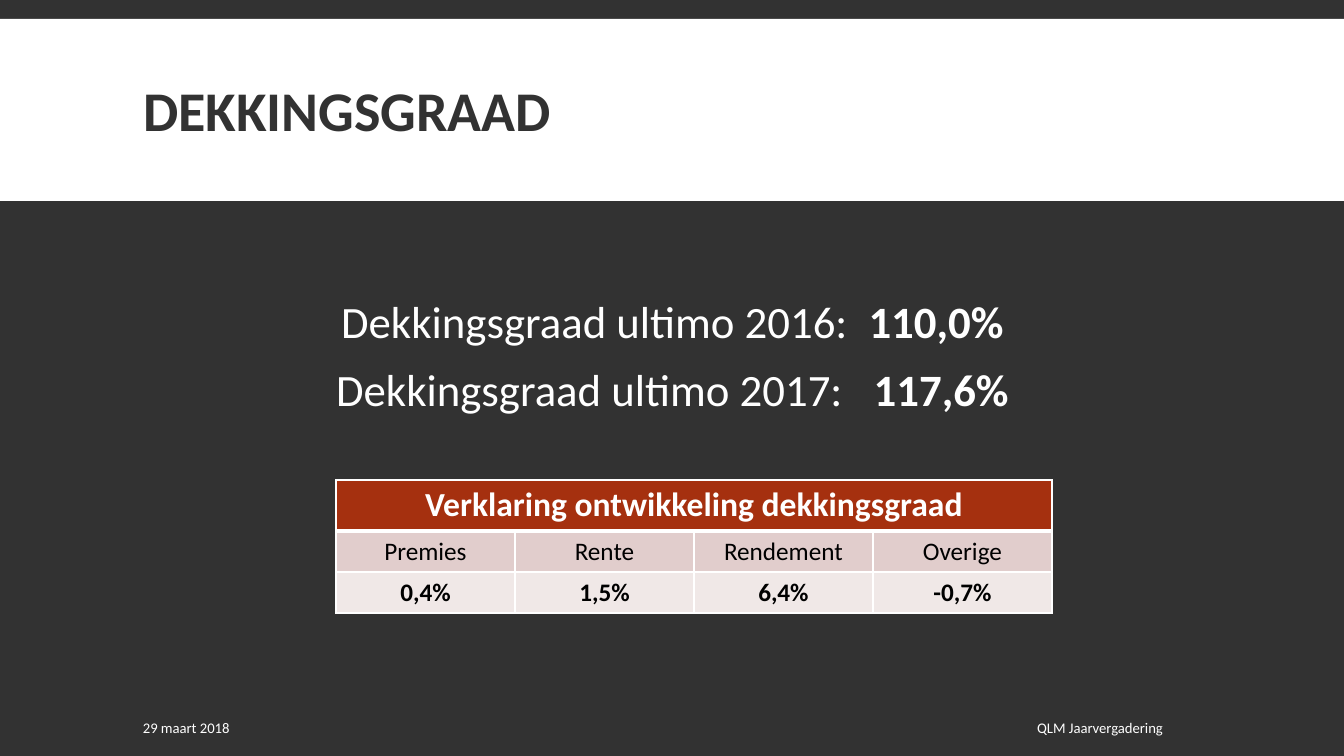
from dataclasses import dataclass

import lxml.etree
import pptx
import pptx.dml.color
import pptx.enum.shapes
import pptx.enum.text
import pptx.oxml.ns
import pptx.util

ALIGN = pptx.enum.text.PP_ALIGN
ANCHOR = pptx.enum.text.MSO_ANCHOR
EMU_PER_PX = 12192000 / 1344


@dataclass(frozen=True)
class Theme:
    font: str = "Calibri"
    dark: str = "323232"
    white: str = "FFFFFF"
    black: str = "000000"
    header: str = "A5300F"
    label_row: str = "E1CDCC"
    value_row: str = "F0E8E7"
    title_size: float = 40
    ratio_size: float = 32
    header_size: float = 24
    cell_size: float = 18
    footer_size: float = 10.5
    space_width: float = 7.23


@dataclass(frozen=True)
class Area:
    left: int
    top: int
    width: int
    height: int


@dataclass(frozen=True)
class Ratio:
    label: str
    value: str
    extra_spaces: int


@dataclass(frozen=True)
class Footer:
    text: str
    area: Area
    align: ALIGN


@dataclass(frozen=True)
class TableRow:
    texts: tuple[str, ...]
    height: int
    fill: str
    color: str
    size: float
    bold: bool
    top_line: float
    bottom_line: float


THEME = Theme()
BANNER = Area(0, 19, 1344, 182)
TITLE = Area(133, 31, 1079, 166)
BODY = Area(133, 222, 1079, 464)
BODY_TOP_INSET = 78
TABLE = Area(336, 480, 716, 133)
RATIOS = (
    Ratio("Dekkingsgraad ultimo 2016:", "110,0%", 1),
    Ratio("Dekkingsgraad ultimo 2017:", "117,6%", 2),
)
FOOTERS = (
    Footer("QLM Jaarvergadering", Area(617, 708, 556, 40), ALIGN.RIGHT),
    Footer("29 maart 2018", Area(133, 708, 331, 40), ALIGN.LEFT),
)
ROWS = (
    TableRow(("Verklaring ontwikkeling dekkingsgraad",), 51, THEME.header,
             THEME.white, THEME.header_size, True, 1, 3),
    TableRow(("Premies", "Rente", "Rendement", "Overige"), 41, THEME.label_row,
             THEME.black, THEME.cell_size, False, 3, 1),
    TableRow(("0,4%", "1,5%", "6,4%", "-0,7%"), 41, THEME.value_row,
             THEME.black, THEME.cell_size, True, 1, 1),
)


def px(length: int) -> pptx.util.Emu:
    return pptx.util.Emu(round(length * EMU_PER_PX))


def bounds(area: Area) -> tuple:
    return px(area.left), px(area.top), px(area.width), px(area.height)


def rgb(color: str) -> pptx.dml.color.RGBColor:
    return pptx.dml.color.RGBColor.from_string(color)


def style(span, size: float, color: str, bold: bool = False) -> None:
    span.font.name = THEME.font
    span.font.size = pptx.util.Pt(size)
    span.font.bold = bold
    span.font.color.rgb = rgb(color)


def draw_banner(page) -> None:
    banner = page.shapes.add_shape(
        pptx.enum.shapes.MSO_SHAPE.RECTANGLE, *bounds(BANNER))
    banner.shadow.inherit = False
    banner.fill.solid()
    banner.fill.fore_color.rgb = rgb(THEME.white)
    banner.line.fill.background()
    page.shapes._spTree.insert(2, banner._element)


def draw_title(page) -> None:
    title = page.shapes.title
    title.left, title.top, title.width, title.height = bounds(TITLE)
    frame = title.text_frame
    frame.text = "DEKKINGSGRAAD"
    frame.auto_size = pptx.enum.text.MSO_AUTO_SIZE.NONE
    frame.vertical_anchor = ANCHOR.MIDDLE
    para = frame.paragraphs[0]
    para.alignment = ALIGN.LEFT
    para.line_spacing = 0.85
    style(para.runs[0], THEME.title_size, THEME.dark, True)


def draw_ratios(page) -> None:
    frame = page.shapes.add_textbox(*bounds(BODY)).text_frame
    frame.word_wrap = True
    frame.margin_top = px(BODY_TOP_INSET)
    for index, ratio in enumerate(RATIOS):
        para = frame.add_paragraph() if index else frame.paragraphs[0]
        para.alignment = ALIGN.CENTER
        para.line_spacing = 0.9
        para.space_before = pptx.util.Pt(12 if index else 0)
        para.space_after = pptx.util.Pt(2)
        for text, bold in ((ratio.label, False), (" ", False), (ratio.value, True)):
            span = para.add_run()
            span.text = text
            style(span, THEME.ratio_size, THEME.white, bold)
        gap = round(ratio.extra_spaces * THEME.space_width * 100)
        para.runs[1]._r.get_or_add_rPr().set("spc", str(gap))


def draw_borders(cell, row: TableRow) -> None:
    properties = cell._tc.get_or_add_tcPr()
    qn = pptx.oxml.ns.qn
    sides = (("a:lnL", 1), ("a:lnR", 1),
             ("a:lnT", row.top_line), ("a:lnB", row.bottom_line))
    for index, (tag, points) in enumerate(sides):
        line = lxml.etree.Element(qn(tag), w=str(pptx.util.Pt(points)))
        fill = lxml.etree.SubElement(line, qn("a:solidFill"))
        lxml.etree.SubElement(fill, qn("a:srgbClr"), val=THEME.white)
        properties.insert(index, line)


def draw_table(page) -> None:
    columns = max(len(row.texts) for row in ROWS)
    table = page.shapes.add_table(len(ROWS), columns, *bounds(TABLE)).table
    table.first_row = table.horz_banding = False
    for column in table.columns:
        column.width = px(TABLE.width // columns)
    for row_index, row in enumerate(ROWS):
        table.rows[row_index].height = px(row.height)
        for column_index in range(columns):
            cell = table.cell(row_index, column_index)
            cell.fill.solid()
            cell.fill.fore_color.rgb = rgb(row.fill)
            draw_borders(cell, row)
        for column_index, text in enumerate(row.texts):
            cell = table.cell(row_index, column_index)
            cell.text_frame.text = text
            para = cell.text_frame.paragraphs[0]
            para.alignment = ALIGN.CENTER
            style(para.runs[0], row.size, row.color, row.bold)
    table.cell(0, 0).merge(table.cell(0, columns - 1))


def draw_footer(page, footer: Footer) -> None:
    frame = page.shapes.add_textbox(*bounds(footer.area)).text_frame
    frame.word_wrap = True
    frame.vertical_anchor = ANCHOR.MIDDLE
    frame.text = footer.text
    para = frame.paragraphs[0]
    para.alignment = footer.align
    style(para.runs[0], THEME.footer_size, THEME.white)


def main() -> None:
    deck = pptx.Presentation()
    deck.slide_width, deck.slide_height = px(1344), px(756)
    page = deck.slides.add_slide(deck.slide_layouts.get_by_name("Title Only"))
    page.background.fill.solid()
    page.background.fill.fore_color.rgb = rgb(THEME.dark)
    draw_banner(page)
    draw_title(page)
    draw_ratios(page)
    draw_table(page)
    for footer in FOOTERS:
        draw_footer(page, footer)
    deck.save("out.pptx")


if __name__ == "__main__":
    main()
